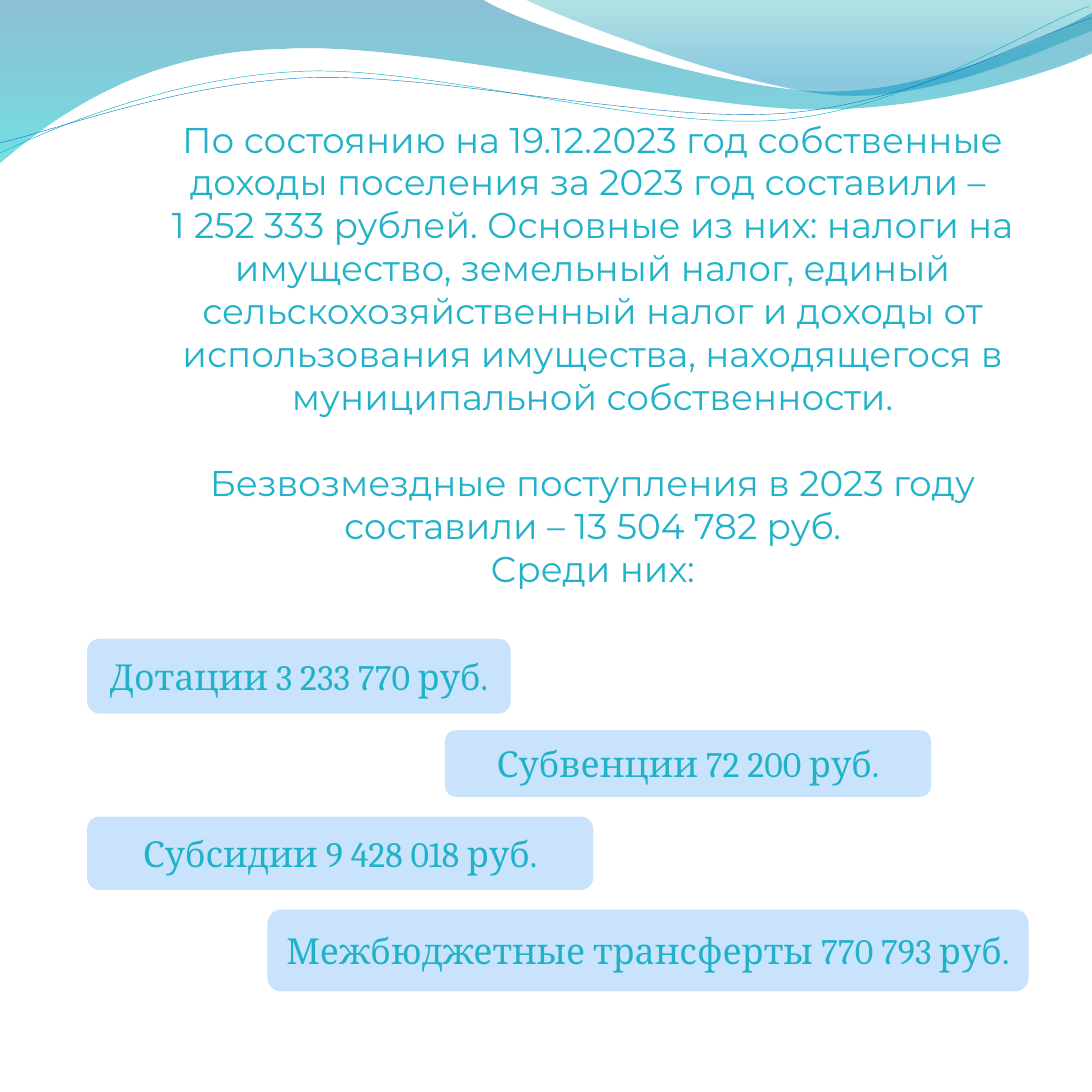
from dataclasses import dataclass

import pptx
import pptx.dml.color
import pptx.enum.shapes
import pptx.enum.text
import pptx.oxml
import pptx.oxml.ns
import pptx.util

Inches = pptx.util.Inches
Pt = pptx.util.Pt


@dataclass(frozen=True)
class Theme:
    text: str = "21B2C9"
    panel: str = "C8E3FB"
    heading_font: str = "Montserrat"
    amount_font: str = "Cambria"
    size: int = 65
    paragraph_gap: int = 78
    # Gradient stops: position, colour, opacity in percent
    left_wave: tuple = ((0, "0074A1", 45), (1, "00C6CF", 55))
    right_wave: tuple = ((0, "00A1A9", 30), (0.8, "008BBF", 45))
    upper_line: tuple = ("0AB8BF", 0.85)
    lower_line: tuple = ("0F6FC6", 0.75)


THEME = Theme()
SIDE = 27.56

# Outlines: a pair is a corner, six numbers are a Bezier curve
LEFT_WAVE = [
    (0, -0.02), (12.14, -0.03),
    (13.11, 0.62, 18.29, 2.31, 20.9, 2.31),
    (23.51, 2.31, 26.41, 0.94, 27.56, 0.32),
    (27.59, 1.33),
    (27.1, 1.61, 23.97, 2.78, 20.56, 2.77),
    (17.14, 2.76, 10.52, 1.02, 7.09, 1.25),
    (3.56, 1.3, 1.26, 3.05, -0.03, 4.16),
]
RIGHT_WAVE = [
    (13.21, -0.03),
    (14.04, 0.41, 18.8, 2.27, 21.19, 2.4),
    (23.58, 2.54, 26.5, 1.17, 27.56, 0.77),
    (27.56, 0),
]
UPPER_LINE = [
    (0.01, 3.86),
    (1.33, 3.23, 4.34, 1.94, 7.62, 1.8),
    (10.89, 1.66, 16.35, 3.3, 19.66, 3.03),
    (22.97, 2.75, 25.86, 0.75, 27.48, 0.16),
]
LOWER_LINE = [
    (0.01, 3.6),
    (1.31, 3.32, 4.5, 2.09, 7.8, 1.96),
    (11.09, 1.84, 16.48, 3.11, 19.77, 2.86),
    (23.06, 2.61, 25.93, 0.95, 27.55, 0.45),
]

INCOME = [
    "По состоянию на 19.12.2023 год собственные доходы поселения за 2023 год составили – ",
    "1 252 333 рублей. Основные из них: налоги на имущество, земельный налог, "
    "единый сельскохозяйственный налог и доходы от использования имущества, "
    "находящегося в муниципальной собственности.",
    "Безвозмездные поступления в 2023 году составили – 13 504 782 руб.",
    "Среди них:",
]
FIRST_GRANT_PARAGRAPH = 2

# Text, then left, top, width and height within the amounts region
AMOUNTS = [
    ("Дотации 3 233 770 руб.", 0, 0, 10.69, 1.89),
    ("Субвенции 72 200 руб.", 9.03, 2.31, 12.27, 1.68),
    ("Субсидии 9 428 018 руб.", 0, 4.49, 12.77, 1.85),
    ("Межбюджетные трансферты 770 793 руб.", 4.55, 6.84, 19.21, 2.06),
]


def rgb(value):
    return pptx.dml.color.RGBColor.from_string(value)


def write_text(paragraph, text, *, font, size=THEME.size, color=THEME.text, space_before=0):
    paragraph.alignment = pptx.enum.text.PP_ALIGN.CENTER
    if space_before:
        paragraph.space_before = Pt(space_before)
    run = paragraph.add_run()
    run.text = text
    run.font.name = font
    run.font.size = Pt(size)
    run.font.color.rgb = rgb(color)


def add_outline(slide, left, top, outline, closed):
    """Join the end points with lines, then bend those that are curves."""
    parts = [[(Inches(left + x), Inches(top + y)) for x, y in zip(part[::2], part[1::2])]
             for part in outline]
    builder = slide.shapes.build_freeform(*parts[0][0])
    builder.add_line_segments([part[-1] for part in parts[1:]], close=closed)
    shape = builder.convert_to_shape()
    shape.shadow.inherit = False
    lines = list(shape._element.spPr.iter(pptx.oxml.ns.qn("a:lnTo")))
    for line, part in zip(lines, parts[1:]):
        if len(part) == 3:
            points = "".join(f'<a:pt x="{x - shape.left}" y="{y - shape.top}"/>'
                             for x, y in part)
            curve = pptx.oxml.parse_xml(
                f'<a:cubicBezTo {pptx.oxml.ns.nsdecls("a")}>{points}</a:cubicBezTo>')
            line.getparent().replace(line, curve)
    return shape


def fill_gradient(shape, stops):
    shape.fill.gradient()
    shape.fill.gradient_angle = 270
    for stop, (position, color, _) in zip(shape.fill.gradient_stops, stops):
        stop.position = position
        stop.color.rgb = rgb(color)
    colors = shape._element.spPr.iter(pptx.oxml.ns.qn("a:srgbClr"))
    for element, (_, _, opacity) in zip(list(colors), stops):
        alpha = pptx.oxml.parse_xml(
            f'<a:alpha {pptx.oxml.ns.nsdecls("a")} val="{opacity * 1000}"/>')
        element.append(alpha)


def draw_waves(slide, left, top):
    # Filled waves
    for outline, stops in ((LEFT_WAVE, THEME.left_wave), (RIGHT_WAVE, THEME.right_wave)):
        wave = add_outline(slide, left, top, outline, closed=True)
        fill_gradient(wave, stops)
        wave.line.fill.background()
    # Thin lines
    for outline, (color, width) in ((UPPER_LINE, THEME.upper_line),
                                    (LOWER_LINE, THEME.lower_line)):
        curve = add_outline(slide, left, top, outline, closed=False)
        curve.fill.background()
        curve.line.color.rgb = rgb(color)
        curve.line.width = Pt(width)


def draw_income(slide, left, top, width, height):
    box = slide.shapes.add_textbox(*map(Inches, (left, top, width, height)))
    frame = box.text_frame
    frame.word_wrap = True
    frame.margin_top = Inches(1.21)
    for index, text in enumerate(INCOME):
        paragraph = frame.add_paragraph() if index else frame.paragraphs[0]
        gap = THEME.paragraph_gap if index == FIRST_GRANT_PARAGRAPH else 0
        write_text(paragraph, text, font=THEME.heading_font, space_before=gap)


def draw_amounts(slide, left, top):
    for text, x, y, width, height in AMOUNTS:
        panel = slide.shapes.add_shape(
            pptx.enum.shapes.MSO_SHAPE.ROUNDED_RECTANGLE,
            *map(Inches, (left + x, top + y, width, height)))
        panel.shadow.inherit = False
        panel.fill.solid()
        panel.fill.fore_color.rgb = rgb(THEME.panel)
        panel.line.fill.background()
        frame = panel.text_frame
        frame.word_wrap = True
        frame.vertical_anchor = pptx.enum.text.MSO_ANCHOR.MIDDLE
        write_text(frame.paragraphs[0], text, font=THEME.amount_font)


def main():
    presentation = pptx.Presentation()
    presentation.slide_width = presentation.slide_height = Inches(SIDE)
    slide = presentation.slides.add_slide(presentation.slide_layouts[6])
    draw_waves(slide, 0, 0)
    draw_income(slide, 3.46, 1.75, 23, 18.02)
    draw_amounts(slide, 2.2, 16.12)
    presentation.save("out.pptx")


if __name__ == "__main__":
    main()
